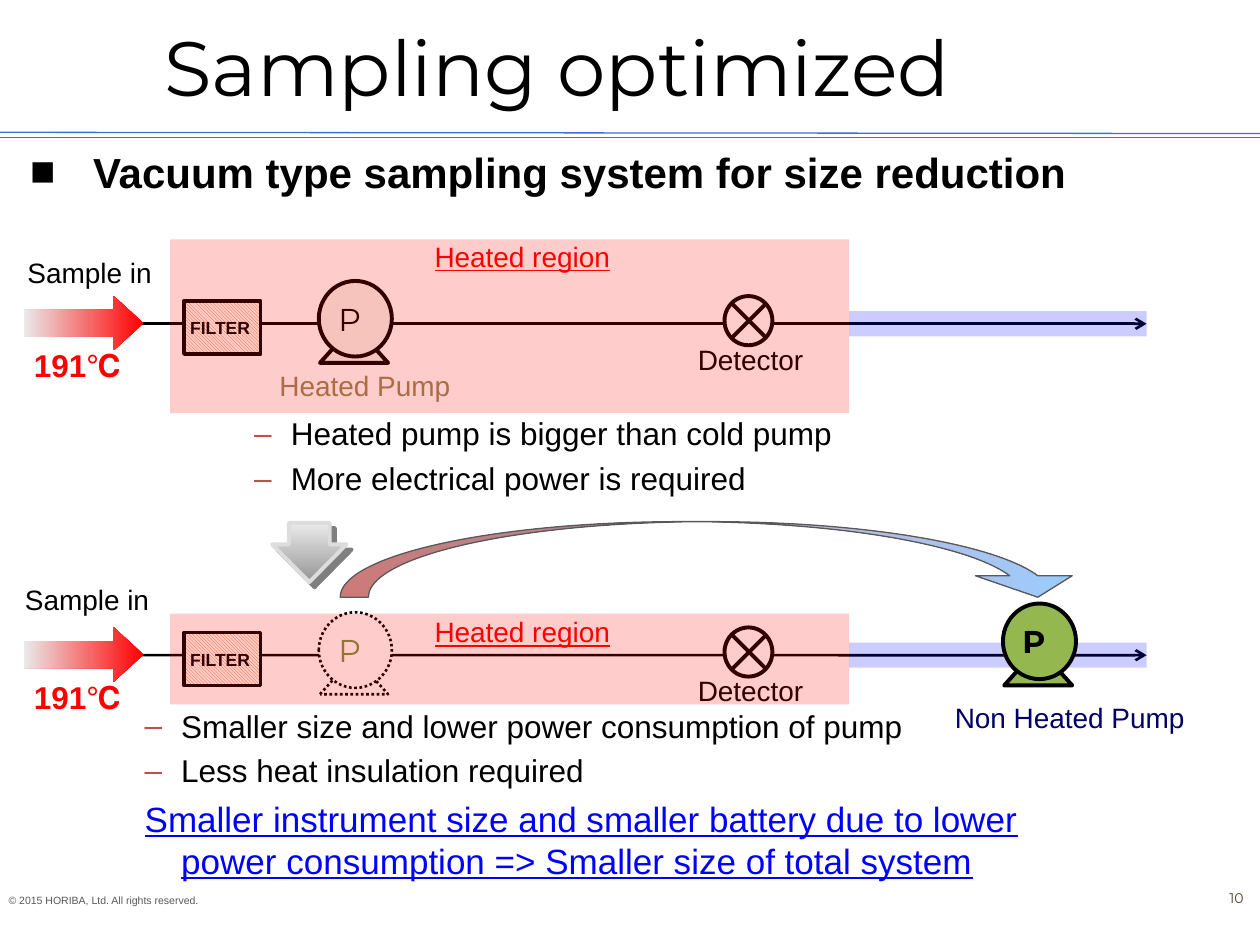
from lxml import etree
from pptx import Presentation
from pptx import util as u
from pptx.dml.color import RGBColor
from pptx.enum import dml, shapes, text
from pptx.oxml.ns import qn

I = u.Inches
SHAPE = shapes.MSO_SHAPE
ALIGN = text.PP_ALIGN

COLORS = {
    "ink": "000000", "paper": "FFFFFF", "rule": "3B6FE0", "red": "FF0000",
    "cold": "0000FF", "navy": "000066", "tan": "948A54", "olive": "77933C",
    "cream": "F5F4ED", "green": "95B74F", "orange": "E46C0A", "dash": "C0504D",
    "footer": "595959", "number": "4A452A", "mist": "EAEAEA", "steel": "969696",
    "edge": "DDDDDD", "rose": "FF9999", "sky": "99CCFF",
}
ROW_STEP = 2.63


def rgb(name):
    return RGBColor.from_string(COLORS[name])


def child(parent, tag, **attributes):
    return etree.SubElement(parent, qn(tag), attributes)


def write(frame, words, size=16, color="ink", font="Arial", bold=False, underline=False,
          align=ALIGN.LEFT, before=0, spacing=None, indent=None, bullet=None,
          bullet_color=None, first=True):
    """Write one paragraph; indent is (left margin, first-line offset) in inches."""
    para = frame.paragraphs[0] if first else frame.add_paragraph()
    para.alignment = align
    if before and not first:
        para.space_before = u.Pt(before)
    if spacing:
        para.line_spacing = spacing
    properties = para._p.get_or_add_pPr()
    if indent:
        properties.set("marL", str(I(indent[0])))
        properties.set("indent", str(I(indent[1])))
    if bullet:
        if bullet_color:
            child(child(properties, "a:buClr"), "a:srgbClr", val=COLORS[bullet_color])
        child(properties, "a:buFont", typeface="Arial")
        child(properties, "a:buChar", char=bullet)
    span = para.add_run()
    span.text = words
    span.font.size = u.Pt(size)
    span.font.name = font
    span.font.bold = bold
    span.font.underline = underline
    span.font.color.rgb = rgb(color)


class Diagram:
    def __init__(self, page):
        self.page = page

    def frame(self, x, y, w, h, wrap=True, anchor=text.MSO_ANCHOR.TOP):
        box = self.page.shapes.add_textbox(I(x), I(y), I(w), I(h))
        box.text_frame.word_wrap = wrap
        box.text_frame.vertical_anchor = anchor
        return box.text_frame

    def label(self, words, x, y, w, h=0.37, wrap=True, **style):
        write(self.frame(x, y, w, h, wrap), words, **style)

    def bullets(self, x, y, w, h, items):
        frame = self.frame(x, y, w, h)
        for index, words in enumerate(items):
            write(frame, words, size=18, before=4, indent=(1.38, -0.29), bullet="–",
                  bullet_color="dash", first=index == 0)
        return frame

    def line(self, x1, y1, x2, y2, color="ink", width=2.25, arrow=False):
        connector = self.page.shapes.add_connector(
            shapes.MSO_CONNECTOR.STRAIGHT, I(x1), I(y1), I(x2), I(y2))
        connector.line.color.rgb = rgb(color)
        connector.line.width = u.Pt(width)
        if arrow:
            child(connector.line._get_or_add_ln(), "a:tailEnd", type="arrow")
        child(connector._element.spPr, "a:effectLst")
        return connector

    def shape(self, kind, x, y, w, h, fill=None, alpha=None, gradient=None, line=None,
              width=2.25, dotted=False, rotation=0, adjust=()):
        item = self.page.shapes.add_shape(kind, I(x), I(y), I(w), I(h))
        item.shadow.inherit = False
        item.rotation = rotation
        for index, value in enumerate(adjust):
            item.adjustments[index] = value
        if gradient:
            item.fill.gradient()
            item.fill.gradient_angle = 0
            for stop, color, position in zip(item.fill.gradient_stops, gradient, (0, 1)):
                stop.color.rgb = rgb(color)
                stop.position = position
        elif fill:
            item.fill.solid()
            item.fill.fore_color.rgb = rgb(fill)
            if alpha:
                color = item._element.spPr.find(".//" + qn("a:srgbClr"))
                child(color, "a:alpha", val=str(alpha * 1000))
        if line:
            item.line.color.rgb = rgb(line)
            item.line.width = u.Pt(width)
            if dotted:
                item.line.dash_style = dml.MSO_LINE.ROUND_DOT
        else:
            item.line.fill.background()
        return item

    def inside(self, item, words, left, right, **style):
        frame = item.text_frame
        frame.margin_left, frame.margin_right = I(left), I(right)
        frame.vertical_anchor = text.MSO_ANCHOR.MIDDLE
        write(frame, words, **style)

    def pump(self, x, y, fill, color="ink", bold=False, width=2.25, dotted=False):
        """Draw a round pump on its triangular foot."""
        look = dict(fill=fill, line="ink", width=width, dotted=dotted)
        self.shape(SHAPE.ISOSCELES_TRIANGLE, x + 0.01, y + 0.35, 0.54, 0.3, **look)
        body = self.shape(SHAPE.OVAL, x, y, 0.58, 0.6, **look)
        self.inside(body, "P", 0.07, 0.1, size=18, color=color, font="Montserrat", bold=bold)

    def filter(self, y):
        item = self.shape(SHAPE.RECTANGLE, 1.46, y, 0.61, 0.42, line="ink", width=2)
        item.fill.patterned()
        item.fill.pattern = dml.MSO_PATTERN.LIGHT_DOWNWARD_DIAGONAL
        item.fill.fore_color.rgb = rgb("orange")
        item.fill.back_color.rgb = rgb("paper")
        self.inside(item, "FILTER", 0.05, 0, size=10, bold=True)

    def detector(self, y):
        self.shape(SHAPE.OVAL, 5.75, y, 0.38, 0.39, fill="paper", line="ink")
        self.line(5.81, y + 0.06, 6.08, y + 0.33)
        self.line(6.08, y + 0.06, 5.81, y + 0.33)
        self.label("Detector", 5.44, y + 0.32, 1.14)

    def sampling_line(self, top, pump, sample_at, region_top, region_height, region_label):
        """Draw one sampling line, shifted down by top, with its heated region."""
        flow = self.line(1.06, top + 2.57, 9.1, top + 2.57, width=1.5, arrow=True)
        self.pump(2.53, top + 2.23, **pump)
        self.label("191℃", 0.17, top + 2.7, 1.24, 0.4, size=18, color="red", bold=True)
        cold = self.shape(SHAPE.RECTANGLE, 6.74, top + 2.47, 2.36, 0.2, fill="cold", alpha=20)
        flow.end_connect(cold, 3)
        self.label("Heated region", 3.35, region_label, 1.92, color="red", underline=True)
        self.shape(SHAPE.LEFT_ARROW, 0.19, top + 2.35, 0.95, 0.43, rotation=180,
                   gradient=("red", "mist"), adjust=(0.5, 0.554))
        self.filter(top + 2.39)
        self.detector(top + 2.35)
        self.label("Sample in", *sample_at, 1.2, 0.3, wrap=False, spacing=0.75)
        if top == 0:
            self.label("Heated Pump", 2.12, 2.88, 1.86, color="tan")
        self.shape(SHAPE.RECTANGLE, 1.35, region_top, 5.39, region_height,
                   fill="red", alpha=20)

    def step_arrow(self):
        arrow = self.shape(SHAPE.RIGHT_ARROW, 2.22, 4.09, 0.47, 0.59, rotation=90,
                           gradient=("mist", "steel"), line="edge", adjust=(0.55, 0.636))
        effects = arrow._element.spPr.find(qn("a:effectLst"))
        shadow = child(effects, "a:outerShdw", dist=str(u.Pt(4.2)), dir="2700000",
                       algn="ctr", rotWithShape="0")
        child(child(shadow, "a:srgbClr", val=COLORS["ink"]), "a:alpha", val="50000")


def main():
    deck = Presentation()
    deck.slide_width, deck.slide_height = I(10), I(7.5)
    page = deck.slides.add_slide(deck.slide_layouts[6])
    art = Diagram(page)

    art.label("© 2015 HORIBA, Ltd. All rights reserved.", -0.03, 7.05, 1.73, 0.2,
              wrap=False, size=6, color="footer")
    art.line(0, 1.09, 10, 1.09, color="rule", width=0.75)
    art.line(0, 1.05, 10, 1.06, color="rule", width=0.75)
    art.label("10", 9.62, 7.01, 0.35, 0.24, wrap=False, size=8, color="number",
              font="Montserrat", align=ALIGN.RIGHT)
    write(art.frame(0.9, 0.13, 7.05, 0.79, anchor=text.MSO_ANCHOR.MIDDLE),
          "Sampling optimized", size=44, font="Montserrat", align=ALIGN.CENTER)
    art.label("Vacuum type sampling system for size reduction", 0.14, 1.11, 8.44, 0.5,
              wrap=False, size=24, bold=True, indent=(0.5, -0.5), bullet="■")

    art.sampling_line(0, dict(fill="cream"), (0.12, 2.04), 1.9, 1.38, 1.85)
    art.bullets(0.83, 3.24, 7.8, 0.93, ["Heated pump is bigger than cold pump",
                                        "More electrical power is required"])

    art.sampling_line(ROW_STEP, dict(fill="paper", color="olive", width=1.5, dotted=True),
                      (0.1, 4.64), 4.87, 0.72, 4.83)
    art.pump(7.96, 4.79, "green", bold=True)
    art.label("Non Heated Pump", 7.48, 5.51, 2.5, color="navy")
    summary = art.bullets(-0.04, 5.56, 8.98, 0.93,
                          ["Smaller size and lower power consumption of pump",
                           "Less heat insulation required"])
    write(summary, "Smaller instrument size and smaller battery due to lower power "
          "consumption => Smaller size of total system", size=20, color="cold",
          underline=True, before=4.6, indent=(1.38, -0.29), first=False)

    art.step_arrow()
    art.shape(SHAPE.CURVED_DOWN_ARROW, 2.7, 4.14, 5.92, 0.6, gradient=("rose", "sky"),
              line="footer", width=0.75, adjust=(0.373, 1.278, 0.283))
    deck.save("out.pptx")


if __name__ == "__main__":
    main()
